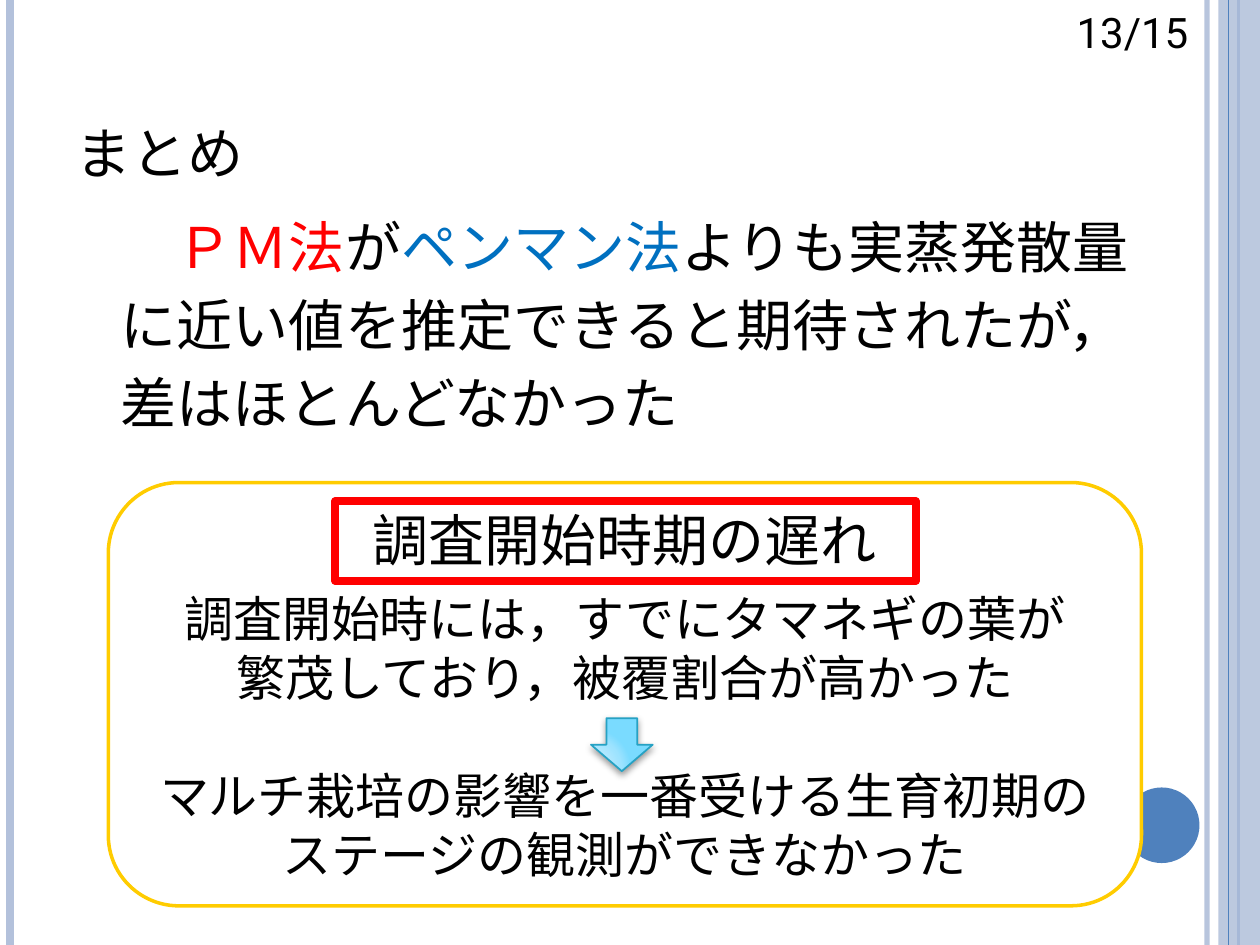
from lxml import etree
from pptx import Presentation
from pptx.dml.color import RGBColor
from pptx.enum.shapes import MSO_CONNECTOR, MSO_SHAPE
from pptx.enum.text import MSO_ANCHOR, PP_ALIGN
from pptx.oxml import parse_xml
from pptx.oxml.ns import nsdecls, qn
from pptx.util import Inches, Pt

BLACK = RGBColor(0x00, 0x00, 0x00)
WHITE = RGBColor(0xFF, 0xFF, 0xFF)
RED = RGBColor(0xFF, 0x00, 0x00)
BLUE = RGBColor(0x00, 0x70, 0xC0)
YELLOW = RGBColor(0xFF, 0xCC, 0x00)
PALE_BLUE = RGBColor(0xB3, 0xC1, 0xDB)
ACCENT = RGBColor(0x4F, 0x81, 0xBD)
ARROW_EDGE = RGBColor(0x26, 0xA2, 0xC4)
ARROW_STOPS = [(0, "C4EEFF"), (30, "BFECFF"), (75, "9DE3FF"), (100, "7ADBFF")]
FONT = "Roboto"


def place(shape, left, top, width, height):
    shape.left, shape.top = Inches(left), Inches(top)
    shape.width, shape.height = Inches(width), Inches(height)


def set_font(font, size, color=BLACK):
    font.name, font.size = FONT, Pt(size)
    font.color.rgb = color


def set_alpha(color_parent, percent):
    color = next(color_parent.iter(qn("a:srgbClr")))
    etree.SubElement(color, qn("a:alpha"), val=str(percent * 1000))


def add_shape(slide, kind, box, fill=None, line=None, line_width=1):
    shape = slide.shapes.add_shape(kind, *(Inches(value) for value in box))
    shape.shadow.inherit = False
    if fill is None:
        shape.fill.background()
    else:
        shape.fill.solid()
        shape.fill.fore_color.rgb = fill
    if line is None:
        shape.line.fill.background()
    else:
        shape.line.color.rgb = line
        shape.line.width = Pt(line_width)
    return shape


def add_rule(slide, x, height, color, width):
    rule = slide.shapes.add_connector(
        MSO_CONNECTOR.STRAIGHT, Inches(x), 0, Inches(x), Inches(height))
    rule.line.color.rgb = color
    rule.line.width = Pt(width)
    etree.SubElement(rule._element.spPr, qn("a:effectLst"))
    return rule


def add_decoration(slide, width, height):
    inner_rule = add_rule(slide, width - 0.42, height, PALE_BLUE, 3)
    set_alpha(inner_rule._element.spPr, 93)
    add_rule(slide, 0.08, height, PALE_BLUE, 4.5)
    add_rule(slide, width - 0.17, height, ACCENT, 1.5)
    band = add_shape(slide, MSO_SHAPE.RECTANGLE, (width - 0.33, 0, 0.33, height), PALE_BLUE)
    set_alpha(band._element.spPr, 87)
    add_rule(slide, width - 0.25, height, ACCENT, 0.75)
    add_shape(slide, MSO_SHAPE.OVAL, (width - 1.08, height - 1.25, 0.6, 0.6), ACCENT)


def fill_title(title, box):
    place(title, *box)
    title.text_frame.vertical_anchor = MSO_ANCHOR.BOTTOM
    paragraph = title.text_frame.paragraphs[0]
    paragraph.alignment = PP_ALIGN.LEFT
    run = paragraph.add_run()
    run.text = "まとめ"
    set_font(run.font, 40)
    run._r.get_or_add_rPr().set("cap", "small")


def fill_body(body, box):
    place(body, *box)
    lines = [
        [("　ＰＭ法", RED), ("が", BLACK), ("ペンマン法", BLUE), ("よりも実蒸発散量", BLACK)],
        [("に近い値を推定できると期待されたが，", BLACK)],
        [("差はほとんどなかった", BLACK)],
    ]
    frame = body.text_frame
    frame.margin_right = 0
    for index, runs in enumerate(lines):
        paragraph = frame.add_paragraph() if index else frame.paragraphs[0]
        paragraph.space_before = Pt(6 if index else 0)
        properties = paragraph._p.get_or_add_pPr()
        properties.set("marL", str(Inches(0.3)))
        properties.set("indent", str(Inches(-0.3)))
        etree.SubElement(properties, qn("a:buNone"))
        for text, color in runs:
            run = paragraph.add_run()
            run.text = text
            set_font(run.font, 32, color)


def add_page_number(slide, box):
    text_box = slide.shapes.add_textbox(*(Inches(value) for value in box))
    text_box.text_frame.word_wrap = True
    paragraph = text_box.text_frame.paragraphs[0]
    paragraph.text = "13/15"
    paragraph.alignment = PP_ALIGN.RIGHT
    set_font(paragraph.font, 24)


def add_down_arrow(slide, box):
    arrow = add_shape(slide, MSO_SHAPE.DOWN_ARROW, box, WHITE, ARROW_EDGE, 1)
    properties = arrow._element.spPr
    stops = "".join(
        f'<a:gs pos="{position * 1000}"><a:srgbClr val="{color}"/></a:gs>'
        for position, color in ARROW_STOPS)
    gradient = parse_xml(
        f'<a:gradFill {nsdecls("a")}><a:gsLst>{stops}</a:gsLst><a:path path="circle">'
        '<a:fillToRect l="5000" t="100000" r="120000" b="10000"/></a:path></a:gradFill>')
    properties.replace(properties.find(qn("a:solidFill")), gradient)
    shadow = parse_xml(
        f'<a:outerShdw {nsdecls("a")} blurRad="{Pt(4)}" dist="{Pt(2)}" dir="5400000" '
        'rotWithShape="0"><a:srgbClr val="000000"><a:alpha val="40000"/></a:srgbClr>'
        '</a:outerShdw>')
    properties.find(qn("a:effectLst")).append(shadow)


def add_reason_panel(slide, left, top, width, height):
    panel = add_shape(slide, MSO_SHAPE.ROUNDED_RECTANGLE, (left, top, width, height),
                      WHITE, YELLOW, 2)
    frame = panel.text_frame
    frame.word_wrap = True
    frame.vertical_anchor = MSO_ANCHOR.MIDDLE
    lines = [
        ("調査開始時期の遅れ", 32, 0),
        ("調査開始時には，すでにタマネギの葉が", 28, 9),
        ("繁茂しており，被覆割合が高かった", 28, 0),
        ("マルチ栽培の影響を一番受ける生育初期のステージの観測ができなかった", 28, 34),
    ]
    for index, (text, size, gap) in enumerate(lines):
        paragraph = frame.add_paragraph() if index else frame.paragraphs[0]
        paragraph.text = text
        paragraph.alignment = PP_ALIGN.CENTER
        paragraph.space_before = Pt(gap)
        set_font(paragraph.font, size)
    add_shape(slide, MSO_SHAPE.RECTANGLE, (left + 1.8, top + 0.15, 4.61, 0.63),
              line=RED, line_width=4.5)
    add_down_arrow(slide, (left + 3.83, top + 1.87, 0.49, 0.42))


def main():
    presentation = Presentation()
    presentation.slide_width, presentation.slide_height = Inches(10), Inches(7.5)
    slide = presentation.slides.add_slide(presentation.slide_layouts[1])
    add_decoration(slide, 10, 7.5)
    fill_title(slide.shapes.title, (0.5, 0.3, 8.17, 1.25))
    fill_body(slide.placeholders[1], (0.86, 1.64, 8.2, 5.33))
    add_page_number(slide, (8.28, 0, 1.25, 0.5))
    add_reason_panel(slide, 0.86, 3.83, 8.2, 3.36)
    presentation.save("out.pptx")


if __name__ == "__main__":
    main()
